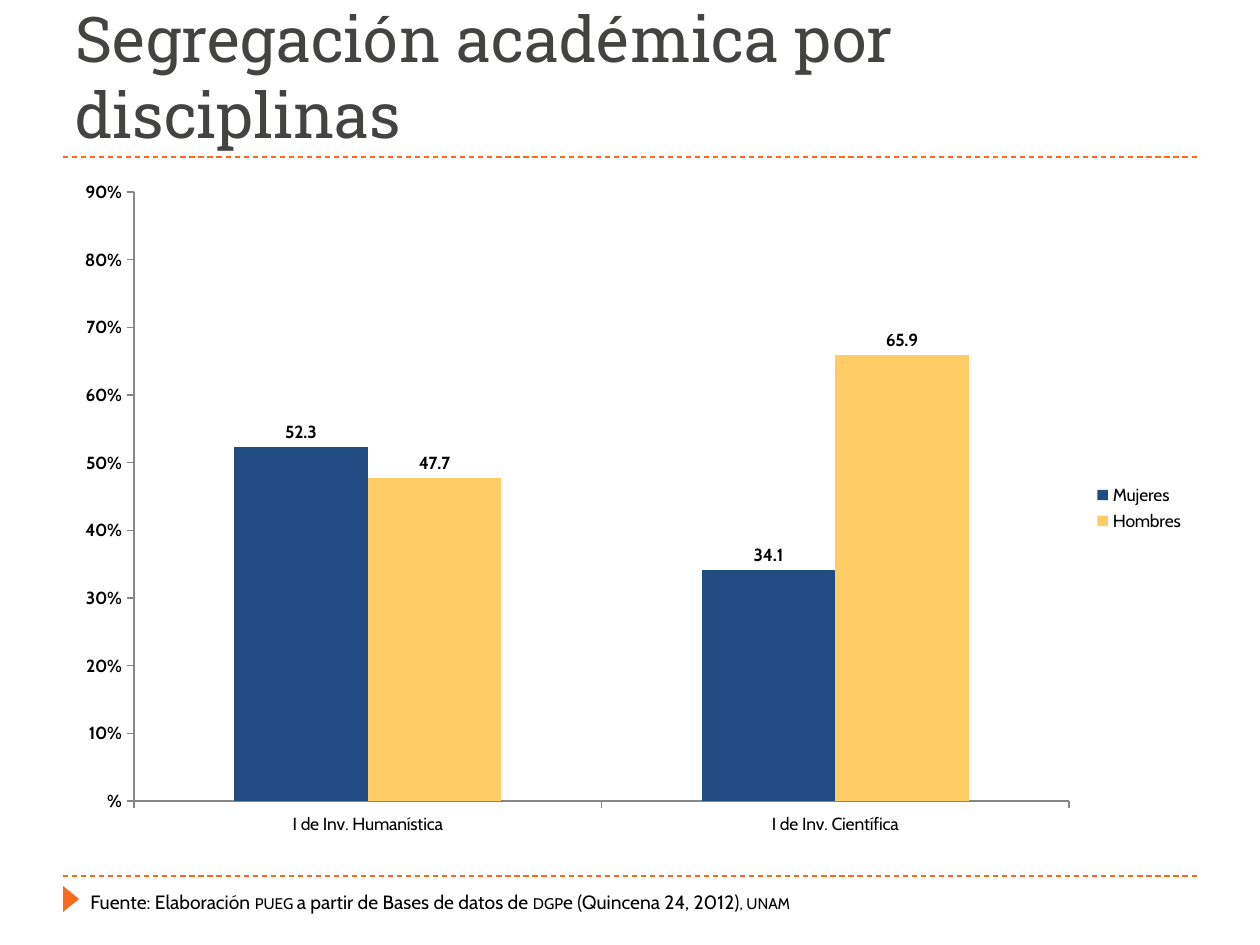
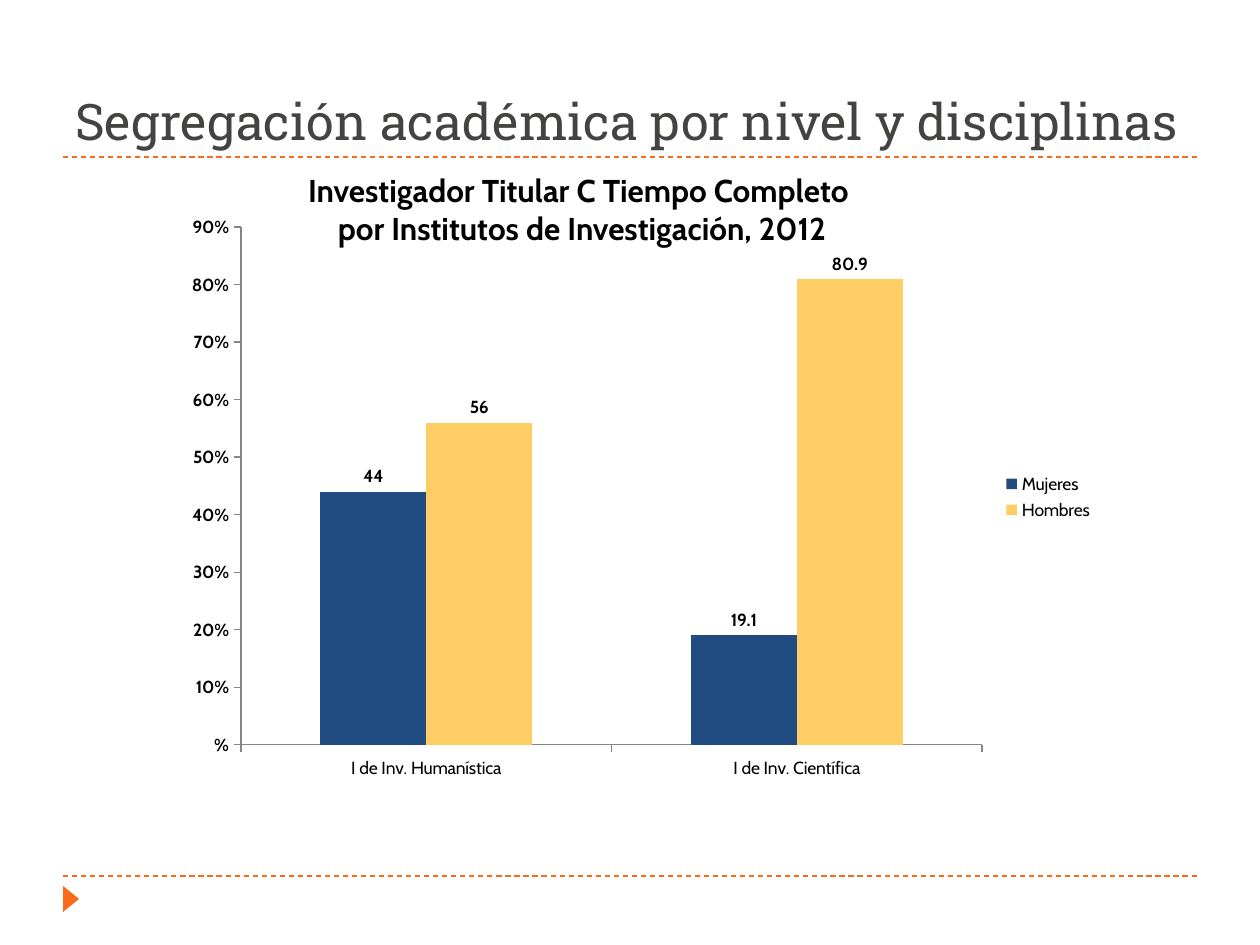
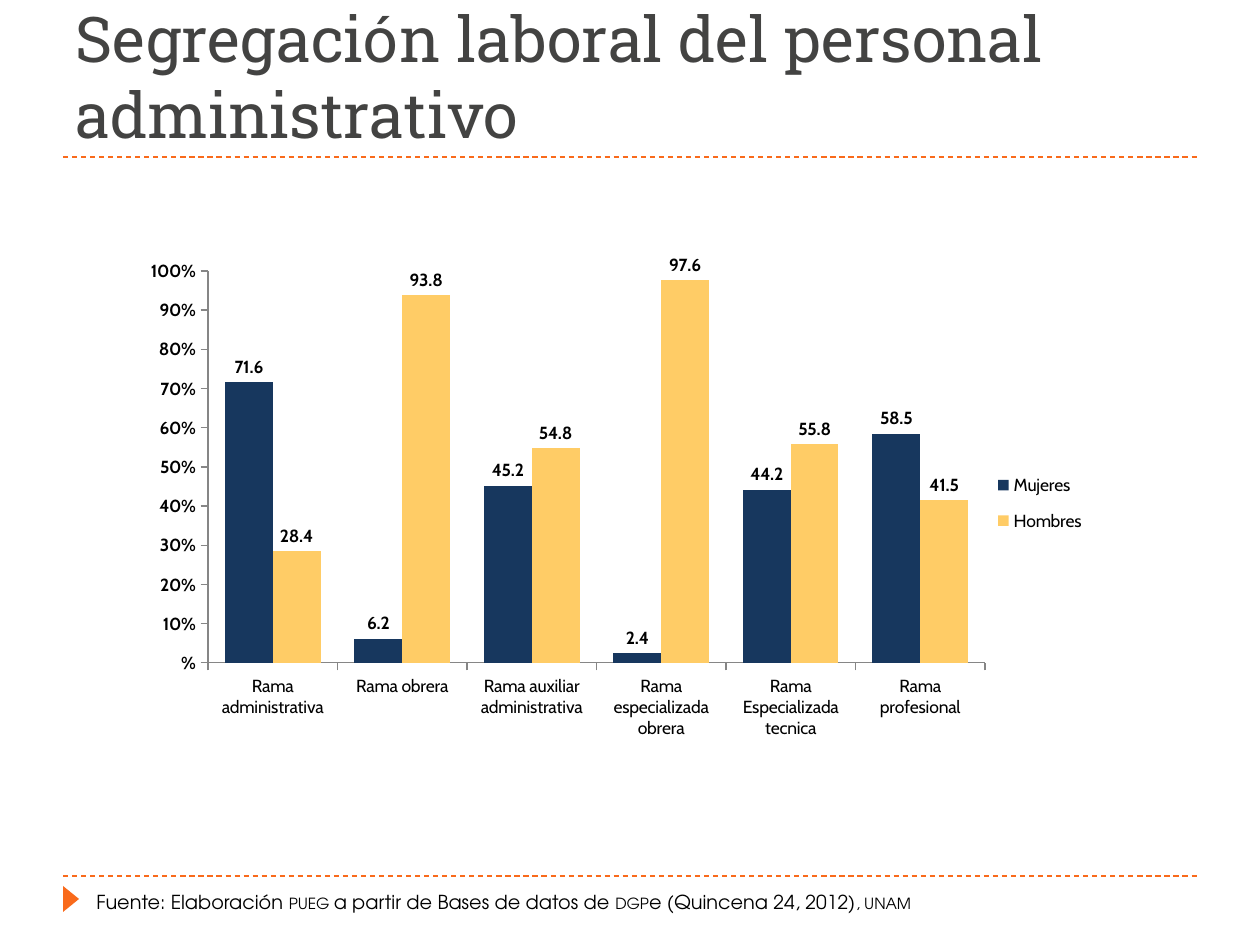
import pptx
import pptx.chart.data
import pptx.dml.color
import pptx.enum.chart
import pptx.enum.dml
import pptx.enum.shapes
import pptx.enum.text
import pptx.oxml
import pptx.oxml.ns
import pptx.util

PX = 914400 / 126
COLOURS = {"title": "434342", "text": "000000", "accent": "F96A1B", "axis": "868686",
           "blue": "204C82", "navy": "17375E", "yellow": "FFCC66"}
TITLE_FONT = "Roboto Slab"
BODY_FONT = "Cabin"

INSTITUTES = ["I de Inv. Humanística", "I de Inv. Científica"]
BRANCHES = ["Rama administrativa", "Rama obrera", "Rama auxiliar administrativa",
            "Rama especializada obrera", "Rama Especializada tecnica", "Rama profesional"]

# Source note: text and whether it is in small capitals
SOURCE = [("Fuente: Elaboración ", False), ("pueg ", True),
          ("a partir de Bases de datos de ", False), ("dgp", True),
          ("e (Quincena 24, 2012)", False), (", unam", True)]

# Boxes are left, top, width, height in px
SLIDES = [
    {"title": "Segregación académica por disciplinas", "title_size": 36,
     "source": {"box": (78, 884, 853, 36), "font": BODY_FONT},
     "chart": {"box": (63, 168, 1134, 680), "plot": (134, 192, 935, 609),
               "categories": INSTITUTES, "women": [52.3, 34.1], "men": [47.7, 65.9],
               "women_colour": "blue", "gap": 150, "max": 90}},
    {"title": "Segregación académica por nivel y disciplinas", "title_size": 28.8,
     "chart": {"box": (174, 204, 932, 586), "plot": (241, 227, 741, 518),
               "categories": INSTITUTES, "women": [44, 19.1], "men": [56, 80.9],
               "women_colour": "blue", "gap": 150, "max": 90},
     "heading": ["Investigador Titular C Tiempo Completo ",
                 "por Institutos de Investigación, 2012"]},
    {"title": "Segregación laboral del personal administrativo", "title_size": 36,
     "source": {"box": (84, 884, 853, 36), "font": "TeX Gyre Adventor"},
     "chart": {"box": (115, 195, 1012, 639), "plot": (208, 271, 777, 392),
               "legend": (990, 460, 100, 86), "categories": BRANCHES,
               "women": [71.6, 6.2, 45.2, 2.4, 44.2, 58.5],
               "men": [28.4, 93.8, 54.8, 97.6, 55.8, 41.5],
               "women_colour": "navy", "gap": 71, "max": 100}},
]


def emu(*lengths):
    return [round(length * PX) for length in lengths]


def colour(name):
    return pptx.dml.color.RGBColor.from_string(COLOURS[name])


def style_font(font, name, size, colour_name, bold=False):
    font.name, font.size, font.bold = name, pptx.util.Pt(size), bold
    font.color.rgb = colour(colour_name)


def add_text_box(page, box, wrap=True):
    frame = page.shapes.add_textbox(*emu(*box)).text_frame
    frame.word_wrap = wrap
    return frame


def add_rule(page, y):
    rule = page.shapes.add_connector(pptx.enum.shapes.MSO_CONNECTOR.STRAIGHT,
                                     *emu(63, y, 1197, y))
    rule.line.color.rgb = colour("accent")
    rule.line.width = pptx.util.Pt(0.75)
    rule.line.dash_style = pptx.enum.dml.MSO_LINE.DASH
    properties = rule._element.spPr
    properties.append(pptx.oxml.parse_xml(
        f"<a:effectLst {pptx.oxml.ns.nsdecls('a')}/>"))


def add_frame(page, title, size):
    """Rules, footer triangle and title shared by all slides."""
    for y in (876, 157):
        add_rule(page, y)
    marker = page.shapes.add_shape(pptx.enum.shapes.MSO_SHAPE.ISOSCELES_TRIANGLE,
                                   *emu(58, 891, 26, 16))
    marker.rotation = 90
    marker.shadow.inherit = False
    marker.fill.solid()
    marker.fill.fore_color.rgb = colour("accent")
    marker.line.fill.background()

    frame = add_text_box(page, (63, 21, 1134, 136))
    frame.vertical_anchor = pptx.enum.text.MSO_ANCHOR.BOTTOM
    para = frame.paragraphs[0]
    para.text = title
    style_font(para.font, TITLE_FONT, size, "title")


def add_source(page, box, font):
    para = add_text_box(page, box).paragraphs[0]
    style_font(para.font, font, 11, "text")
    for text, small in SOURCE:
        span = para.add_run()
        span.text = text
        if small:
            span.font._element.set("cap", "small")


def add_heading(page, lines):
    frame = add_text_box(page, (263, 165, 638, 89), wrap=False)
    for index, line in enumerate(lines):
        para = frame.add_paragraph() if index else frame.paragraphs[0]
        para.text = line
        para.alignment = pptx.enum.text.PP_ALIGN.CENTER
        style_font(para.font, BODY_FONT, 18, "text", bold=True)


def place_inside(element, index, box, chart_box, target=""):
    """Give a plot area or legend a fixed place, as fractions of the chart."""
    for old in element.findall(pptx.oxml.ns.qn("c:layout")):
        element.remove(old)
    left, top, width, height = chart_box
    parts = {"x": (box[0] - left) / width, "y": (box[1] - top) / height,
             "w": box[2] / width, "h": box[3] / height}
    modes = "".join(f'<c:{key}Mode val="edge"/>' for key in "xy")
    values = "".join(f'<c:{key} val="{value:.4f}"/>' for key, value in parts.items())
    element.insert(index, pptx.oxml.parse_xml(
        f"<c:layout {pptx.oxml.ns.nsdecls('c')}><c:manualLayout>"
        f"{target}{modes}{values}</c:manualLayout></c:layout>"))


def add_bar_chart(page, content):
    data = pptx.chart.data.CategoryChartData()
    data.categories = content["categories"]
    data.add_series("Mujeres", content["women"])
    data.add_series("Hombres", content["men"])
    chart = page.shapes.add_chart(pptx.enum.chart.XL_CHART_TYPE.COLUMN_CLUSTERED,
                                  *emu(*content["box"]), data).chart
    chart.has_title = False
    style_font(chart.font, BODY_FONT, 10, "text")

    # Bars and their labels
    plot = chart.plots[0]
    plot.vary_by_categories = False
    plot.gap_width, plot.overlap = content["gap"], 0
    for series, name in zip(plot.series, (content["women_colour"], "yellow")):
        series.format.fill.solid()
        series.format.fill.fore_color.rgb = colour(name)
        labels = series.data_labels
        labels.show_value = True
        labels.position = pptx.enum.chart.XL_LABEL_POSITION.OUTSIDE_END
        style_font(labels.font, BODY_FONT, 10, "text", bold=True)

    # Axes
    for axis in (chart.category_axis, chart.value_axis):
        axis.has_major_gridlines = False
        axis.major_tick_mark = pptx.enum.chart.XL_TICK_MARK.OUTSIDE
        axis.minor_tick_mark = pptx.enum.chart.XL_TICK_MARK.NONE
        axis.format.line.color.rgb = colour("axis")
    scale = chart.value_axis
    scale.minimum_scale, scale.maximum_scale, scale.major_unit = 0, content["max"], 10
    scale.tick_labels.number_format = "#\\%"
    scale.tick_labels.number_format_is_linked = False
    style_font(scale.tick_labels.font, BODY_FONT, 10, "text", bold=True)

    # Legend and placement
    chart.has_legend = True
    chart.legend.position = pptx.enum.chart.XL_LEGEND_POSITION.RIGHT
    chart.legend.include_in_layout = False
    plot_area = chart._chartSpace.chart.plotArea
    place_inside(plot_area, 0, content["plot"], content["box"],
                 '<c:layoutTarget val="inner"/>')
    if "legend" in content:
        place_inside(chart.legend._element, 1, content["legend"], content["box"])


def main():
    deck = pptx.Presentation()
    deck.slide_width, deck.slide_height = emu(1260, 945)
    for content in SLIDES:
        page = deck.slides.add_slide(deck.slide_layouts[6])
        add_frame(page, content["title"], content["title_size"])
        if "source" in content:
            add_source(page, **content["source"])
        add_bar_chart(page, content["chart"])
        if "heading" in content:
            add_heading(page, content["heading"])
    deck.save("out.pptx")


if __name__ == "__main__":
    main()
